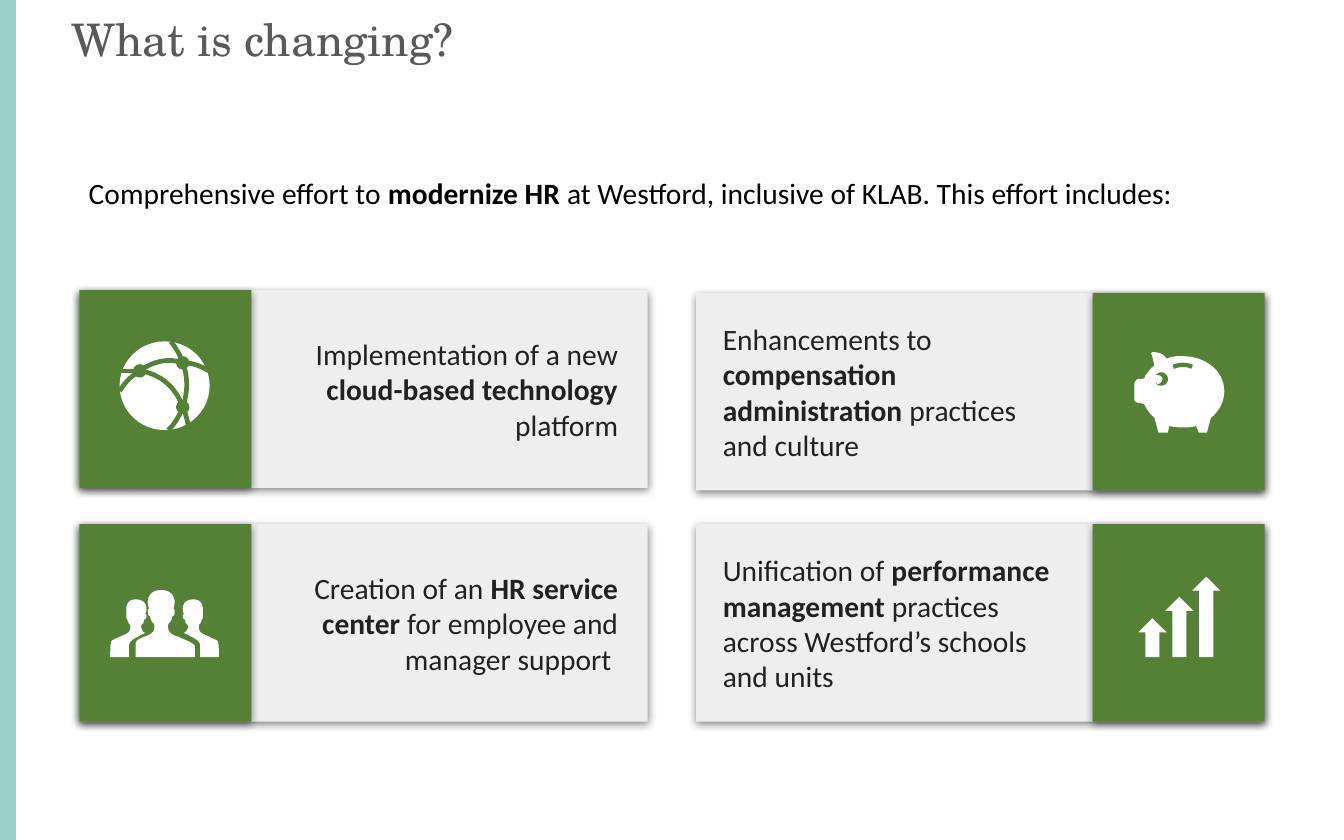
import pptx
import pptx.util
import pptx.dml.color
import pptx.enum.shapes
import pptx.enum.text
import pptx.oxml.ns
import lxml.etree

Inches, Pt = pptx.util.Inches, pptx.util.Pt
SHAPE = pptx.enum.shapes.MSO_SHAPE
ALIGN = pptx.enum.text.PP_ALIGN
COLORS = {"stripe": "9ACEC9", "title": "595959", "card": "EEEEEE", "tile": "548135",
          "body": "212121", "intro": "000000", "icon": "FFFFFF"}
CARD_W, CARD_H, TILE_W = 4.23, 1.47, 1.28

PERSON = [(51, 35), (45, 33, 43, 31, 43, 27), (43, 24, 45, 25, 46, 21), (46, 18, 48, 21, 48, 16),
          (48, 14, 47, 14, 47, 14), (47, 14, 48, 11, 48, 9), (48, 7, 47, 0, 38, 0),
          (29, 0, 28, 7, 28, 9), (28, 11, 29, 14, 29, 14), (29, 14, 28, 14, 28, 16),
          (28, 21, 30, 18, 30, 21), (31, 25, 33, 24, 33, 27), (33, 31, 31, 33, 25, 35),
          (23, 36, 19, 37, 19, 40), (19, 50), (63, 50), (63, 42), (63, 40, 58, 38, 51, 35)]
SIDE_PERSON = [(9, 34), (14, 32, 15, 31, 15, 27), (15, 25, 14, 26, 13, 23), (13, 21, 12, 23, 12, 19),
               (12, 18), (12, 18, 12, 16, 12, 14), (12, 12, 13, 7, 19, 7), (26, 7, 27, 12, 27, 14),
               (27, 16, 26, 18, 26, 18), (26, 18, 27, 18, 27, 19), (27, 23, 25, 21, 25, 23),
               (25, 26, 23, 25, 23, 27), (23, 29, 24, 31, 26, 32), (16, 37, 14, 38, 14, 42),
               (14, 50), (0, 50), (0, 50, 0, 39, 1, 38), (2, 37, 5, 36, 9, 34)]
PIG = [(24, 5), (28, 3, 32, 3, 36, 3), (53, 3, 67, 14, 67, 29), (67, 37, 63, 44, 57, 49),
       (54, 60), (48, 60), (46, 55), (43, 56, 40, 56, 36, 56), (33, 56, 30, 56, 26, 55),
       (25, 60), (18, 60), (15, 49), (13, 47, 10, 44, 8, 40), (8, 39, 6, 38, 4, 38),
       (3, 38, 0, 37, 0, 35), (0, 24), (0, 22, 2, 20, 3, 20), (6, 20, 8, 20, 8, 18),
       (10, 15, 12, 12, 15, 10), (13, 2), (12, 1, 13, 0, 14, 0), (17, 0, 22, 1, 24, 5)]
EYE = [(25, 20), (25, 23, 23, 25, 20, 25), (19, 25, 17, 25, 16, 23), (17, 23, 17, 24, 17, 24),
       (19, 24, 21, 22, 21, 20), (21, 18, 19, 17, 16, 17), (17, 16, 19, 15, 20, 15),
       (23, 15, 25, 18, 25, 20)]
SLOT = [(29, 11), (34, 9, 39, 9, 43, 11)]
GLOBE_LINKS = [[(1, 22), (15, 22)], [(0, 37), (5, 29, 10, 25, 15, 22)],
               [(15, 22), (24, 15, 37, 12, 47, 16)], [(47, 16), (54, 16, 60, 18, 66, 22)],
               [(38, 0), (42, 5, 45, 10, 47, 16)], [(47, 16), (51, 26, 51, 38, 47, 49)],
               [(15, 22), (30, 24, 42, 34, 47, 49)], [(47, 49), (49, 53, 50, 57, 51, 62)],
               [(47, 49), (44, 56, 41, 62, 36, 66)]]
GLOBE_NODES = [(15, 22), (47, 16), (47, 49)]


def rgb(name):
    """Return the named colour."""
    return pptx.dml.color.RGBColor.from_string(COLORS[name])


def paint(sp, fill):
    """Give a shape a plain fill without line or shadow."""
    sp.shadow.inherit = False
    sp.fill.solid()
    sp.fill.fore_color.rgb = rgb(fill)
    sp.line.fill.background()


def shape(s, kind, x, y, w, h, fill):
    """Add a plain preset shape."""
    sp = s.shapes.add_shape(kind, Inches(x), Inches(y), Inches(w), Inches(h))
    paint(sp, fill)
    return sp


def raised_rect(s, x, y, w, fill):
    """Add a card-high rectangle with a soft shadow below it."""
    sp = shape(s, SHAPE.RECTANGLE, x, y, w, CARD_H, fill)
    qn = pptx.oxml.ns.qn
    effects = sp._element.spPr.find(qn("a:effectLst"))
    shadow = lxml.etree.SubElement(effects, qn("a:outerShdw"), blurRad=str(Pt(4.5)),
                                   dist=str(Pt(1.5)), dir="5400000", algn="bl", rotWithShape="0")
    color = lxml.etree.SubElement(shadow, qn("a:srgbClr"), val="000000")
    lxml.etree.SubElement(color, qn("a:alpha"), val="48000")


def trace(steps, n=8):
    """Turn line and cubic steps into a list of points."""
    points = [steps[0]]
    for step in steps[1:]:
        if len(step) == 2:
            points.append(step)
            continue
        start = points[-1]
        for t in (i / n for i in range(1, n + 1)):
            weights = ((1 - t) ** 3, 3 * t * (1 - t) ** 2, 3 * t * t * (1 - t), t ** 3)
            points.append(tuple(sum(w * c for w, c in zip(weights, (start[a],) + step[a::2]))
                                for a in (0, 1)))
    return points


def outline(s, x, y, points, closed=True):
    """Draw points given in hundredths of an inch from x, y."""
    pts = [(Inches(x + px / 100), Inches(y + py / 100)) for px, py in points]
    builder = s.shapes.build_freeform(*pts[0])
    builder.add_line_segments(pts[1:], close=closed)
    return builder.convert_to_shape()


def stroke(s, x, y, steps, width):
    """Draw an open curve in the tile colour."""
    sp = outline(s, x, y, trace(steps), closed=False)
    sp.shadow.inherit = False
    sp.fill.background()
    sp.line.color.rgb = rgb("tile")
    sp.line.width = Pt(width)


def globe_icon(s, x, y):
    """Draw a networked globe in the tile at x, y."""
    x, y = x + 0.3, y + 0.38
    shape(s, SHAPE.OVAL, x, y, 0.67, 0.66, "icon")
    for link in GLOBE_LINKS:
        stroke(s, x, y, link, 2.5)
    for cx, cy in GLOBE_NODES:
        shape(s, SHAPE.OVAL, x + cx / 100 - 0.05, y + cy / 100 - 0.05, 0.1, 0.1, "tile")


def people_icon(s, x, y):
    """Draw three people in the tile at x, y."""
    side = trace(SIDE_PERSON)
    for points in (trace(PERSON), side, [(81 - px, py) for px, py in side]):
        paint(outline(s, x + 0.23, y + 0.49, points), "icon")


def pig_icon(s, x, y):
    """Draw a piggy bank in the tile at x, y."""
    x, y = x + 0.31, y + 0.44
    paint(outline(s, x, y, trace(PIG)), "icon")
    paint(outline(s, x, y, trace(EYE)), "tile")
    stroke(s, x, y, SLOT, 2.3)


def growth_icon(s, x, y):
    """Draw three rising arrows in the tile at x, y."""
    for i, h in enumerate((0.29, 0.45, 0.6)):
        shape(s, SHAPE.UP_ARROW, x + 0.34 + 0.2 * i, y + 0.99 - h, 0.21, h, "icon")


def text(s, x, y, w, h, parts, color, inset, size=15.8, font="Calibri"):
    """Add a text box whose every second part is bold, and return its frame."""
    tf = s.shapes.add_textbox(Inches(x), Inches(y), Inches(w), Inches(h)).text_frame
    tf.word_wrap = True
    tf.margin_left = tf.margin_right = tf.margin_top = tf.margin_bottom = Inches(inset)
    for i, part in enumerate(parts):
        r = tf.paragraphs[0].add_run()
        r.text = part
        r.font.size, r.font.name, r.font.bold = Pt(size), font, i % 2 == 1
        r.font.color.rgb = rgb(color)
    return tf


def header(s, x, y):
    """Add the side stripe, the title and the introduction."""
    stripe = s.shapes.add_connector(pptx.enum.shapes.MSO_CONNECTOR.STRAIGHT,
                                    Inches(0.05), 0, Inches(0.05), Inches(6.25))
    stripe.line.color.rgb = rgb("stripe")
    stripe.line.width = Pt(10)
    lxml.etree.SubElement(stripe._element.spPr, pptx.oxml.ns.qn("a:effectLst"))
    tf = text(s, x, y, 9.35, 0.9, ["What is changing?"], "title", 0.08, 24, "TeX Gyre Schola")
    tf.margin_top = tf.margin_bottom = Inches(0.04)
    p = tf.paragraphs[0]
    p.line_spacing, p.space_before = 0.9, Pt(7.5)
    intro = ["Comprehensive effort to ", "modernize HR",
             " at Westford, inclusive of KLAB. This effort includes:"]
    p = text(s, x + 0.14, y + 1.1, 8.72, 0.76, intro, "intro", 0.07).paragraphs[0]
    p.line_spacing, p.space_after = 1.15, Pt(7.5)


def card(s, x, y, parts, icon, tile_right=False, text_w=2.83):
    """Add a card with a text and an icon tile at its left or right end."""
    tile_x = x + CARD_W - TILE_W if tile_right else x
    text_x = x + 0.1 if tile_right else x + TILE_W
    raised_rect(s, x, y, CARD_W, "card")
    tf = text(s, text_x, y, text_w, CARD_H, parts, "body", 0.1)
    tf.vertical_anchor = pptx.enum.text.MSO_ANCHOR.MIDDLE
    tf.paragraphs[0].alignment = ALIGN.LEFT if tile_right else ALIGN.RIGHT
    raised_rect(s, tile_x, y, TILE_W, "tile")
    icon(s, tile_x, y)


def main():
    """Build the slide and save it."""
    prs = pptx.Presentation()
    prs.slide_width, prs.slide_height = Inches(10), Inches(6.25)
    s = prs.slides.add_slide(prs.slide_layouts[6])
    header(s, 0.45, 0.09)
    card(s, 0.59, 2.16, ["Implementation of a new ", "cloud-based technology", " platform"], globe_icon)
    card(s, 0.59, 3.9, ["Creation of an ", "HR service center",
                        " for employee and manager support "], people_icon)
    card(s, 5.18, 2.18, ["Enhancements to ", "compensation administration ",
                         "practices and culture"], pig_icon, True, 2.7)
    card(s, 5.18, 3.9, ["Unification of ", "performance management",
                        " practices across Westford’s schools and units"], growth_icon, True)
    prs.save("out.pptx")


if __name__ == "__main__":
    main()
